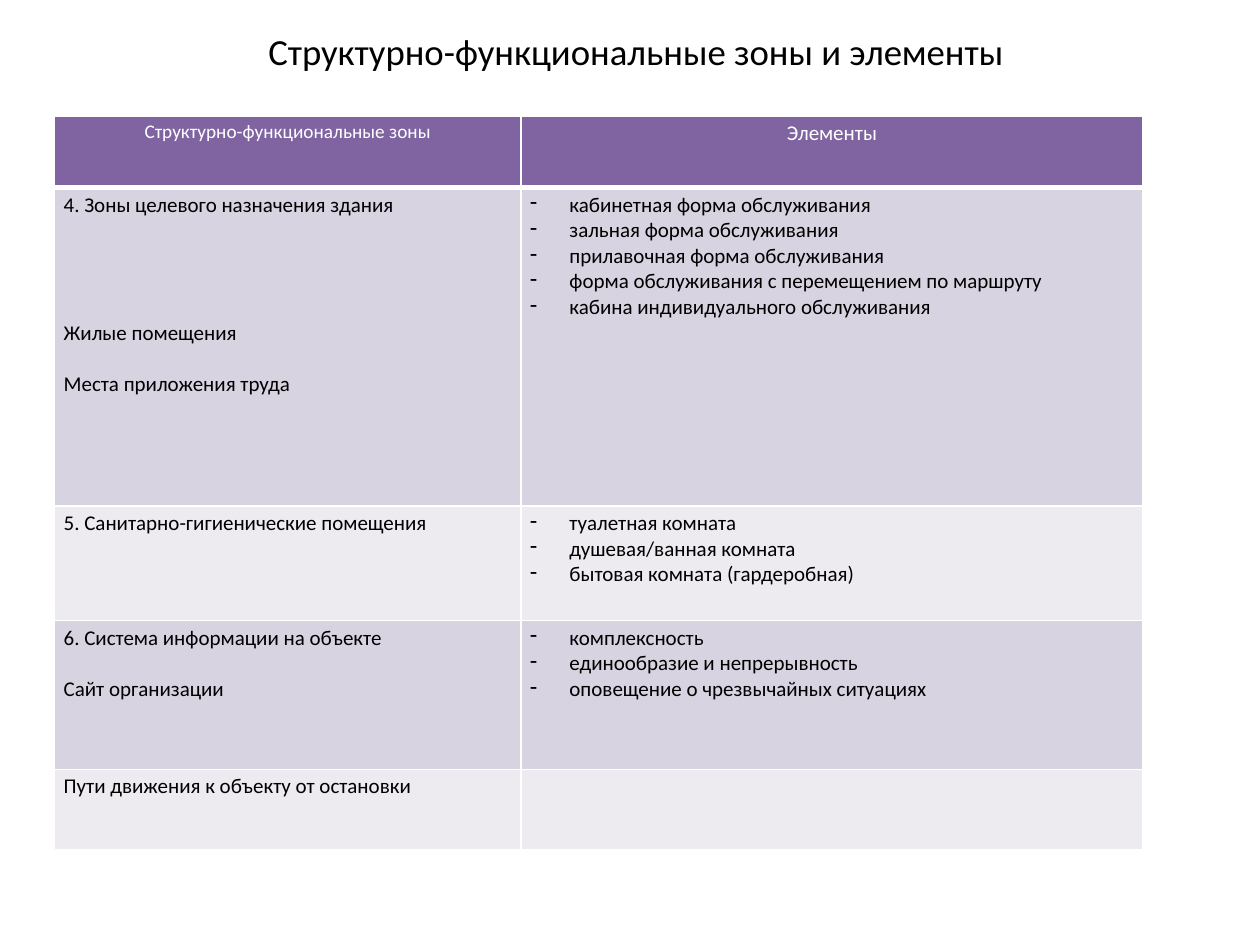
from dataclasses import dataclass

from lxml.etree import SubElement
from pptx import Presentation
from pptx.dml.color import RGBColor
from pptx.enum.text import MSO_ANCHOR, PP_ALIGN
from pptx.oxml.ns import qn
from pptx.util import Pt


@dataclass(frozen=True)
class Theme:
    font: str = "Calibri"
    title_size: float = 21
    zones_header_size: float = 11
    body_size: float = 12
    text: str = "000000"
    header_text: str = "FFFFFF"
    header_fill: str = "8064A2"
    bands: tuple = ("D8D3E0", "EDEAF0")
    border: str = "FFFFFF"


THEME = Theme()
LINE = 14.65  # height of one body line
INDENT = 22.5
COLUMN_WIDTHS = (266.5, 355.5)
ROW_HEIGHTS = (41, 182, 65.5, 85, 46)

TITLE = "Структурно-функциональные зоны и элементы"
HEADERS = (
    ("Структурно-функциональные зоны", THEME.zones_header_size),
    ("Элементы", THEME.body_size),
)
# Each zone line is (text, free lines above it); elements are bulleted
ROWS = (
    (
        (("4. Зоны целевого назначения здания", 0),
         ("Жилые помещения", 4),
         ("Места приложения труда", 1)),
        ("кабинетная форма обслуживания",
         "зальная форма обслуживания",
         "прилавочная форма обслуживания",
         "форма обслуживания с перемещением по маршруту",
         "кабина индивидуального обслуживания"),
    ),
    (
        (("5. Санитарно-гигиенические помещения", 0),),
        ("туалетная комната",
         "душевая/ванная комната",
         "бытовая комната (гардеробная)"),
    ),
    (
        (("6. Система информации на объекте", 0),
         ("Сайт организации", 1)),
        ("комплексность",
         "единообразие и непрерывность",
         "оповещение о чрезвычайных ситуациях"),
    ),
    ((("Пути движения к объекту от остановки", 0),), ()),
)


def format_text(para, size, color):
    for span in para.runs:
        span.font.name = THEME.font
        span.font.size = Pt(size)
        span.font.bold = False
        span.font.color.rgb = RGBColor.from_string(color)


def add_title(page):
    box = page.shapes.add_textbox(Pt(93.5), Pt(0), Pt(540), Pt(58.5))
    frame = box.text_frame
    frame.word_wrap = True
    frame.vertical_anchor = MSO_ANCHOR.MIDDLE
    frame.text = TITLE
    para = frame.paragraphs[0]
    para.alignment = PP_ALIGN.CENTER
    format_text(para, THEME.title_size, THEME.text)


def style_cell(cell, fill, bottom_width=1):
    cell.margin_left = cell.margin_right = Pt(5.2)
    cell.margin_top = cell.margin_bottom = Pt(2.6)
    # Borders come before the fill in the cell properties
    properties = cell._tc.get_or_add_tcPr()
    for side, width in (("L", 1), ("R", 1), ("T", 1), ("B", bottom_width)):
        line = SubElement(properties, qn(f"a:ln{side}"), w=str(Pt(width)))
        solid = SubElement(line, qn("a:solidFill"))
        SubElement(solid, qn("a:srgbClr"), val=THEME.border)
    cell.fill.solid()
    cell.fill.fore_color.rgb = RGBColor.from_string(fill)


def add_bullet(para):
    properties = para._p.get_or_add_pPr()
    properties.set("marL", str(Pt(INDENT)))
    properties.set("indent", str(-Pt(INDENT)))
    SubElement(properties, qn("a:buChar"), char="-")


def write_lines(cell, lines):
    cell.text_frame.text = "\n".join(lines)
    paragraphs = cell.text_frame.paragraphs
    for para in paragraphs:
        format_text(para, THEME.body_size, THEME.text)
    return paragraphs


def fill_header(table):
    for column, (label, size) in enumerate(HEADERS):
        cell = table.cell(0, column)
        style_cell(cell, THEME.header_fill, bottom_width=3)
        cell.text_frame.text = label
        para = cell.text_frame.paragraphs[0]
        para.alignment = PP_ALIGN.CENTER
        format_text(para, size, THEME.header_text)


def fill_row(table, row, zones, elements):
    zone_cell, element_cell = table.cell(row, 0), table.cell(row, 1)
    for cell in (zone_cell, element_cell):
        style_cell(cell, THEME.bands[(row - 1) % 2])

    zone_paragraphs = write_lines(zone_cell, [text for text, _ in zones])
    for para, (_, free_lines) in zip(zone_paragraphs, zones):
        if free_lines:
            para.space_before = Pt(free_lines * LINE)

    if elements:
        for para in write_lines(element_cell, elements):
            add_bullet(para)


def add_zone_table(page):
    table = page.shapes.add_table(
        len(ROW_HEIGHTS), len(COLUMN_WIDTHS), Pt(31.2), Pt(66.2),
        Pt(sum(COLUMN_WIDTHS)), Pt(sum(ROW_HEIGHTS)),
    ).table
    for column, width in zip(table.columns, COLUMN_WIDTHS):
        column.width = Pt(width)
    for row, height in zip(table.rows, ROW_HEIGHTS):
        row.height = Pt(height)
    fill_header(table)
    for row, (zones, elements) in enumerate(ROWS, start=1):
        fill_row(table, row, zones, elements)


def main():
    deck = Presentation()
    deck.slide_width, deck.slide_height = Pt(720), Pt(540)
    page = deck.slides.add_slide(deck.slide_layouts[6])
    add_zone_table(page)
    add_title(page)
    deck.save("out.pptx")


if __name__ == "__main__":
    main()
